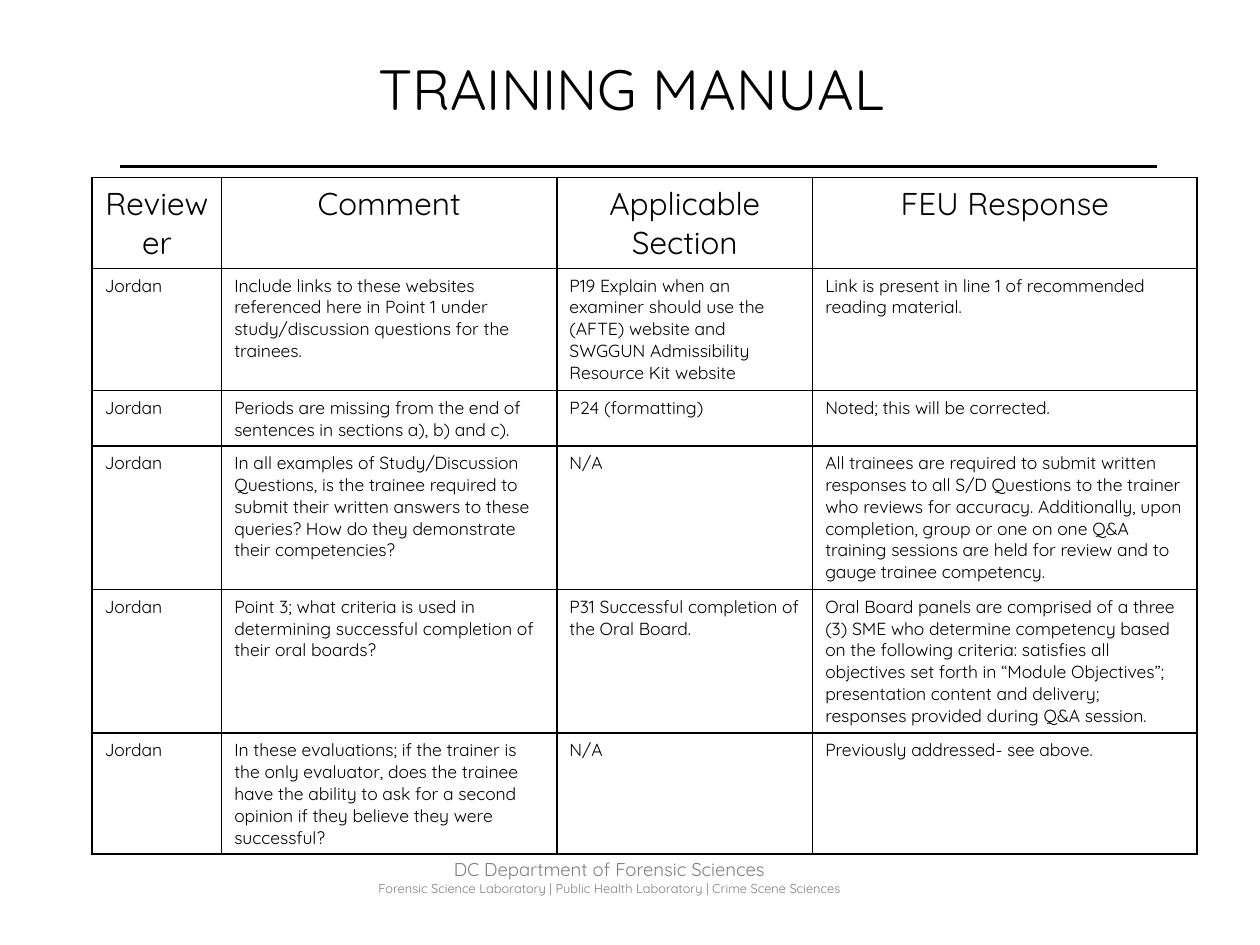
from lxml import etree
from pptx import Presentation
from pptx.dml.color import RGBColor
from pptx.enum.shapes import MSO_CONNECTOR
from pptx.enum.text import MSO_ANCHOR, PP_ALIGN
from pptx.oxml.ns import qn
from pptx.util import Inches, Pt

FONT = "Quicksand"
BLACK = "000000"
GRAY = "7F7F7F"

COLUMN_WIDTHS = [1.03, 2.66, 2.03, 3.05]
ROW_HEIGHTS = [0.72, 0.97, 0.44, 1.14, 1.14, 0.96]
HEADINGS = ["Reviewer", "Comment", "Applicable Section", "FEU Response"]
REVIEWS = [
    ("Jordan",
     "Include links to these websites referenced here in Point 1 under "
     "study/discussion questions for the trainees.",
     "P19 Explain when an examiner should use the (AFTE) website and "
     "SWGGUN Admissibility Resource Kit website",
     "Link is present in line 1 of recommended reading material."),
    ("Jordan",
     "Periods are missing from the end of sentences in sections a), b) and c).",
     "P24 (formatting)",
     "Noted; this will be corrected."),
    ("Jordan",
     "In all examples of Study/Discussion Questions, is the trainee required "
     "to submit their written answers to these queries? How do they "
     "demonstrate their competencies?",
     "N/A",
     "All trainees are required to submit written responses to all S/D "
     "Questions to the trainer who reviews for accuracy. Additionally, upon "
     "completion, group or one on one Q&A training sessions are held for "
     "review and to gauge trainee competency."),
    ("Jordan",
     "Point 3; what criteria is used in determining successful completion of "
     "their oral boards?",
     "P31 Successful completion of the Oral Board.",
     "Oral Board panels are comprised of a three (3) SME who determine "
     "competency based on the following criteria: satisfies all objectives "
     "set forth in “Module Objectives”; presentation content and delivery; "
     "responses provided during Q&A session."),
    ("Jordan",
     "In these evaluations; if the trainer is the only evaluator, does the "
     "trainee have the ability to ask for a second opinion if they believe "
     "they were successful?",
     "N/A",
     "Previously addressed- see above."),
]


def rgb(value):
    return RGBColor.from_string(value)


def write(paragraph, text, size, color=BLACK, align=PP_ALIGN.LEFT):
    paragraph.alignment = align
    run = paragraph.add_run()
    run.text = text
    run.font.name = FONT
    run.font.size = Pt(size)
    run.font.color.rgb = rgb(color)


def add_frame(slide, left, top, width, height, inset_x, inset_y):
    """Add a wrapping text box and return its text frame."""
    frame = slide.shapes.add_textbox(
        Inches(left), Inches(top), Inches(width), Inches(height)).text_frame
    frame.word_wrap = True
    frame.margin_left = frame.margin_right = Inches(inset_x)
    frame.margin_top = frame.margin_bottom = Inches(inset_y)
    return frame


def add_title(slide, left, top, width, height):
    frame = add_frame(slide, left, top, width, height, 0.11, 0.06)
    frame.vertical_anchor = MSO_ANCHOR.MIDDLE
    write(frame.paragraphs[0], "TRAINING MANUAL", 32.4, align=PP_ALIGN.CENTER)


def add_rule(slide, left, top, width):
    rule = slide.shapes.add_connector(
        MSO_CONNECTOR.STRAIGHT, Inches(left), Inches(top),
        Inches(left + width), Inches(top))
    rule.line.color.rgb = rgb(BLACK)
    rule.line.width = Pt(2)
    etree.SubElement(rule._element.spPr, qn("a:effectLst"))


def add_footer(slide, left, top, width, height):
    frame = add_frame(slide, left, top, width, height, 0.07, 0.04)
    write(frame.paragraphs[0], "DC Department of Forensic Sciences", 10.6,
          color=GRAY, align=PP_ALIGN.CENTER)
    write(frame.add_paragraph(),
          "Forensic Science Laboratory | Public Health Laboratory | "
          "Crime Scene Sciences", 7.3, color=GRAY, align=PP_ALIGN.CENTER)


def outline_cell(cell):
    properties = cell._tc.get_or_add_tcPr()
    for index, side in enumerate(("lnL", "lnR", "lnT", "lnB")):
        border = etree.Element(qn(f"a:{side}"), w=str(Pt(1)))
        fill = etree.SubElement(border, qn("a:solidFill"))
        etree.SubElement(fill, qn("a:srgbClr"), val=BLACK)
        properties.insert(index, border)


def add_review_table(slide, left, top):
    rows = [HEADINGS, *REVIEWS]
    table = slide.shapes.add_table(
        len(rows), len(HEADINGS), Inches(left), Inches(top),
        Inches(sum(COLUMN_WIDTHS)), Inches(sum(ROW_HEIGHTS))).table
    table.first_row = table.horz_banding = False
    for column, width in zip(table.columns, COLUMN_WIDTHS):
        column.width = Inches(width)
    for row, height in zip(table.rows, ROW_HEIGHTS):
        row.height = Inches(height)
    for r, texts in enumerate(rows):
        style = {"size": 10} if r else {"size": 18, "align": PP_ALIGN.CENTER}
        for c, text in enumerate(texts):
            cell = table.cell(r, c)
            cell.fill.background()
            outline_cell(cell)
            write(cell.text_frame.paragraphs[0], text, **style)


def main():
    deck = Presentation()
    deck.slide_width, deck.slide_height = Inches(10), Inches(7.5)
    slide = deck.slides.add_slide(deck.slide_layouts[6])
    add_footer(slide, 2, 6.77, 5.67, 0.38)
    add_rule(slide, 0.95, 1.32, 8.23)
    add_title(slide, 0.51, 0.07, 9, 1.25)
    add_review_table(slide, 0.73, 1.41)
    deck.save("out.pptx")


if __name__ == "__main__":
    main()
